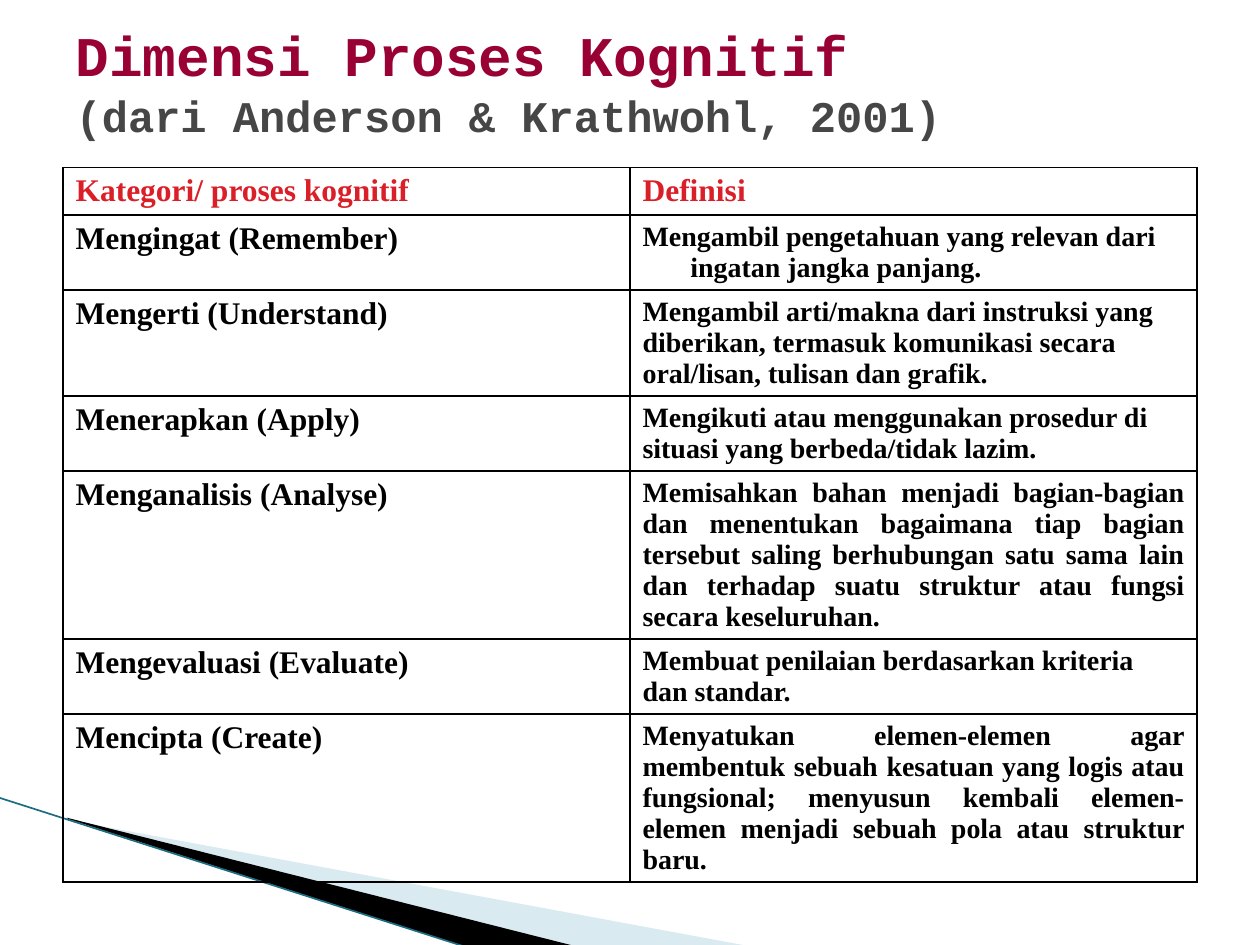
from lxml import etree
from pptx import Presentation
from pptx import util as u
from pptx.dml.color import RGBColor
from pptx.enum import shapes, text
from pptx.oxml.ns import qn

CRIMSON = RGBColor(0x99, 0x00, 0x33)
GREY = RGBColor(0x46, 0x46, 0x46)
RED = RGBColor(0xDA, 0x1F, 0x28)
BLACK = RGBColor(0x00, 0x00, 0x00)
PALE_BLUE = RGBColor(0xA0, 0xCB, 0xDC)
TEAL = RGBColor(0x1C, 0x6C, 0x82)

LEFT, JUSTIFY = text.PP_ALIGN.LEFT, text.PP_ALIGN.JUSTIFY
HANGING = 0.38

# Category, definition, alignment and hanging indent of the definition, row height
ROWS = [
    ("Mengingat (Remember)",
     "Mengambil pengetahuan yang relevan dari ingatan jangka panjang.",
     LEFT, HANGING, 0.57),
    ("Mengerti (Understand)",
     "Mengambil arti/makna dari instruksi yang diberikan, termasuk komunikasi "
     "secara oral/lisan, tulisan dan grafik.", LEFT, 0, 0.81),
    ("Menerapkan (Apply)",
     "Mengikuti atau menggunakan prosedur di situasi yang berbeda/tidak lazim.",
     LEFT, 0, 0.57),
    ("Menganalisis (Analyse)",
     "Memisahkan bahan menjadi bagian-bagian dan menentukan bagaimana tiap bagian "
     "tersebut saling berhubungan satu sama lain dan terhadap suatu struktur atau "
     "fungsi secara keseluruhan.", JUSTIFY, 0, 1.04),
    ("Mengevaluasi (Evaluate)",
     "Membuat penilaian berdasarkan kriteria dan standar.", LEFT, 0, 0.57),
    ("Mencipta (Create)",
     "Menyatukan elemen-elemen agar membentuk sebuah kesatuan yang logis atau "
     "fungsional; menyusun kembali elemen-elemen menjadi sebuah pola atau struktur "
     "baru.", JUSTIFY, 0, 1.04),
]


def set_place(shape, *lengths):
    for key, value in zip(("left", "top", "width", "height"), lengths):
        setattr(shape, key, u.Inches(value))


def add_span(para, words, name, size, color):
    span = para.add_run()
    span.text = words
    for key, value in dict(name=name, size=u.Pt(size), bold=True).items():
        setattr(span.font, key, value)
    span.font.color.rgb = color


def add_wedge(page, frame, points, color, opacity=100):
    corners = [(u.Inches(x), u.Inches(y)) for x, y in points]
    builder = page.shapes.build_freeform(*corners[0])
    builder.add_line_segments(corners[1:], close=True)
    wedge = builder.convert_to_shape()
    # The outline reaches beyond its frame
    shift = {"x": wedge.left - u.Inches(frame[0]),
             "y": wedge.top - u.Inches(frame[1])}
    for point in wedge._element.iter(qn("a:pt")):
        for axis, offset in shift.items():
            point.set(axis, str(int(point.get(axis)) + offset))
    set_place(wedge, *frame)
    outline = next(wedge._element.iter(qn("a:path")))
    outline.set("w", str(wedge.width))
    outline.set("h", str(wedge.height))
    wedge.shadow.inherit = False
    wedge.fill.solid()
    wedge.fill.fore_color.rgb = color
    wedge.line.fill.background()
    if opacity < 100:
        paint = wedge._element.spPr.find(qn("a:solidFill"))[0]
        etree.SubElement(paint, qn("a:alpha"), val=str(opacity * 1000))


def add_line(page, start, end, color, width):
    line = page.shapes.add_connector(
        shapes.MSO_CONNECTOR.STRAIGHT, *map(u.Inches, start + end))
    line.line.color.rgb = color
    line.line.width = u.Pt(width)
    etree.SubElement(line._element.spPr, qn("a:effectLst"))


def fill_title(page):
    title = page.shapes.title
    set_place(title, 0.5, 0, 9, 1.25)
    frame = title.text_frame
    frame.auto_size = text.MSO_AUTO_SIZE.NONE
    frame.vertical_anchor = text.MSO_ANCHOR.MIDDLE
    para = frame.paragraphs[0]
    para.alignment = LEFT
    add_span(para, "Dimensi Proses Kognitif", "Courier New", 32, CRIMSON)
    add_span(para, " ", "Courier New", 35, CRIMSON)
    para.add_line_break()
    # Keep the break no taller than its line
    etree.SubElement(para._p[-1], qn("a:rPr"), sz="3500")
    add_span(para, "(dari Anderson & Krathwohl, 2001)", "Courier New", 25, GREY)


def add_borders(cell, color, width):
    props = cell._tc.get_or_add_tcPr()
    for index, side in enumerate(("lnL", "lnR", "lnT", "lnB")):
        border = etree.Element(qn(f"a:{side}"), w=str(u.Pt(width)))
        paint = etree.SubElement(border, qn("a:solidFill"))
        etree.SubElement(paint, qn("a:srgbClr"), val=str(color))
        props.insert(index, border)


def fill_cell(cell, words, size, color, align, hanging):
    cell.fill.background()
    add_borders(cell, BLACK, 1)
    para = cell.text_frame.paragraphs[0]
    para.alignment = align
    if hanging:
        props = para._p.get_or_add_pPr()
        props.set("marL", str(u.Inches(hanging)))
        props.set("indent", str(-u.Inches(hanging)))
    add_span(para, words, "Times New Roman", size, color)


def add_definitions(page):
    heights = [0.35] + [row[-1] for row in ROWS]
    table = page.shapes.add_table(
        len(heights), 2, u.Inches(0.5), u.Inches(1.33),
        u.Inches(9), u.Inches(sum(heights))).table
    table.first_row = table.horz_banding = False
    for row, height in zip(table.rows, heights):
        row.height = u.Inches(height)
    for column, words in enumerate(("Kategori/ proses kognitif", "Definisi")):
        fill_cell(table.cell(0, column), words, 18, RED, JUSTIFY, HANGING)
    for index, (category, definition, align, hanging, _) in enumerate(ROWS, 1):
        fill_cell(table.cell(index, 0), category, 18, BLACK, LEFT, HANGING)
        fill_cell(table.cell(index, 1), definition, 16, BLACK, align, hanging)


def main():
    deck = Presentation()
    deck.slide_width, deck.slide_height = u.Inches(10), u.Inches(7.5)
    page = deck.slides.add_slide(deck.slide_layouts[5])

    # Corner decoration, behind the table
    add_wedge(page, (0.78, 5.47, 4.16, 1.58),
              [(0.55, 6.51), (5.95, 7.51), (4.56, 7.51), (0.55, 6.5)],
              PALE_BLUE, 40)
    add_wedge(page, (-0.06, 6.33, 4.16, 0.92),
              [(0.53, 6.49), (4.57, 7.51), (3.72, 7.52), (0.54, 6.5)], BLACK)
    add_line(page, (-0.01, 6.33), (3.71, 7.52), TEAL, 0.95)

    # Content
    fill_title(page)
    add_definitions(page)
    deck.save("out.pptx")


if __name__ == "__main__":
    main()
